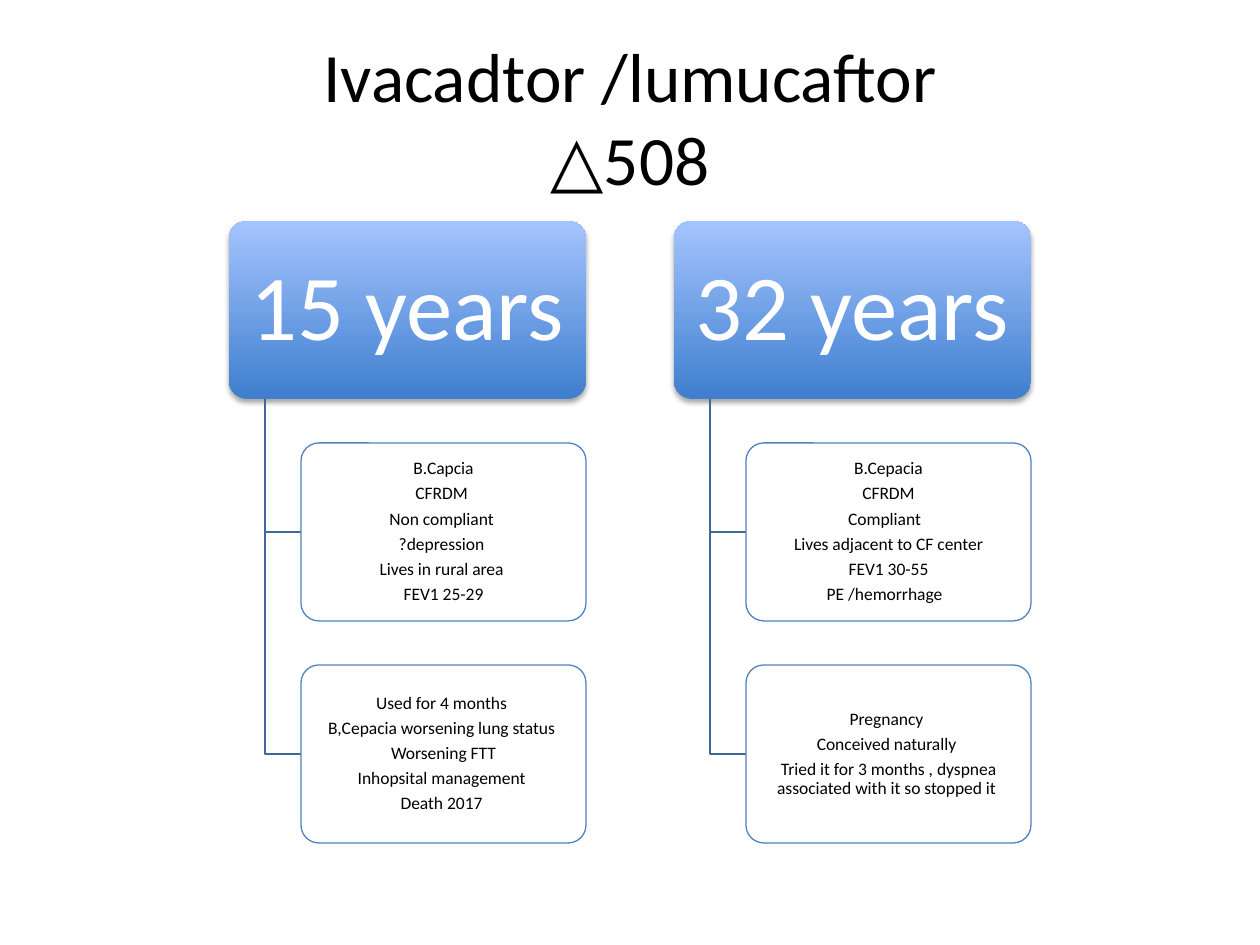
from lxml.etree import SubElement
from pptx import Presentation
from pptx.dml.color import RGBColor
from pptx.enum.shapes import MSO_SHAPE
from pptx.enum.text import MSO_ANCHOR as Anchor, PP_ALIGN as Align
from pptx.oxml.ns import qn
from pptx.util import Pt

EMU_PER_PX = 914400 / 126
COLORS = {
    "text": "000000", "header_text": "FFFFFF", "header_bottom": "3F7FCE",
    "header_top": "A4C4FF", "card": "FFFFFF", "border": "4F81BD",
    "branch": "3F6797", "shadow": "000000",
}
FONT = "Calibri"

COLUMN_LEFT, COLUMN_PITCH = 229, 445
ROW_TOP, ROW_PITCH, BOX_HEIGHT = 221, 222, 178
HEADER_WIDTH, CARD_WIDTH = 357, 285
STEM_OFFSET, CARD_OFFSET = 36, 72

PATIENTS = [
    ("15 years ", [
        ["B.Capcia", "CFRDM ", "Non compliant ", "?depression ",
         "Lives in rural area ", "FEV1 25-29"],
        ["Used for 4 months ", "B,Cepacia worsening lung status ",
         "Worsening FTT", "Inhopsital management ", "Death 2017 "],
    ]),
    ("32 years ", [
        ["B.Cepacia", "CFRDM", "Compliant  ", "Lives adjacent to CF center",
         "FEV1 30-55", "PE /hemorrhage  "],
        ["Pregnancy ", "Conceived naturally ",
         "Tried it for 3 months , dyspnea associated with it so stopped it "],
    ]),
]


def px(length):
    return round(length * EMU_PER_PX)


def rgb(name):
    return RGBColor.from_string(COLORS[name])


class SlideBuilder:
    """Holds the style and the slide being built."""

    def __init__(self, slide):
        self.slide = slide

    def add_run(self, paragraph, text, size, color):
        run = paragraph.add_run()
        run.text = text
        run.font.name = FONT
        run.font.size = Pt(size)
        run.font.color.rgb = rgb(color)

    def title(self, lines, box):
        shape = self.slide.shapes.title
        shape.left, shape.top, shape.width, shape.height = map(px, box)
        frame = shape.text_frame
        frame.vertical_anchor = Anchor.MIDDLE
        paragraph = frame.paragraphs[0]
        paragraph.alignment = Align.CENTER
        for index, line in enumerate(lines):
            if index:
                paragraph.add_line_break()
            self.add_run(paragraph, line, 39.6, "text")

    def rounded_box(self, box, lines, size, color, insets):
        shape = self.slide.shapes.add_shape(
            MSO_SHAPE.ROUNDED_RECTANGLE, *map(px, box))
        shape.adjustments[0] = 0.1
        shape.shadow.inherit = False
        frame = shape.text_frame
        frame.word_wrap = True
        frame.vertical_anchor = Anchor.MIDDLE
        frame.margin_left = frame.margin_right = px(insets[0])
        frame.margin_top = frame.margin_bottom = px(insets[1])
        for index, line in enumerate(lines):
            paragraph = frame.add_paragraph() if index else frame.paragraphs[0]
            paragraph.alignment = Align.CENTER
            paragraph.line_spacing = 0.9
            paragraph.space_after = Pt(size * 0.35)
            self.add_run(paragraph, line, size, color)
        return shape

    def header(self, box, text):
        shape = self.rounded_box(box, [text], 53, "header_text", (14, 9))
        shape.line.fill.background()
        shape.fill.gradient()
        shape.fill.gradient_angle = 90
        stops = shape.fill.gradient_stops
        for stop, color in zip(stops, ("header_bottom", "header_top")):
            stop.color.rgb = rgb(color)
        self.drop_shadow(shape)

    def drop_shadow(self, shape):
        effects = shape._element.spPr.find(qn("a:effectLst"))
        shadow = SubElement(
            effects, qn("a:outerShdw"), blurRad=str(Pt(3.1)),
            dist=str(Pt(1.8)), dir="5400000", rotWithShape="0")
        color = SubElement(shadow, qn("a:srgbClr"), val=COLORS["shadow"])
        SubElement(color, qn("a:alpha"), val="35000")

    def card(self, box, lines):
        shape = self.rounded_box(box, lines, 10, "text", (3, 2))
        shape.fill.solid()
        shape.fill.fore_color.rgb = rgb("card")
        color = shape._element.spPr.find(qn("a:solidFill"))[0]
        SubElement(color, qn("a:alpha"), val="90000")
        self.outline(shape, "border")

    def branch(self, start, end):
        """Draw a line down from start, then right to end."""
        builder = self.slide.shapes.build_freeform(*start, scale=EMU_PER_PX)
        builder.add_line_segments([(start[0], end[1]), end], close=False)
        shape = builder.convert_to_shape()
        shape.shadow.inherit = False
        shape.fill.background()
        self.outline(shape, "branch")

    def outline(self, shape, color):
        shape.line.color.rgb = rgb(color)
        shape.line.width = Pt(0.75)


def main():
    presentation = Presentation()
    presentation.slide_width, presentation.slide_height = px(1260), px(945)
    title_only = presentation.slide_layouts[5]
    builder = SlideBuilder(presentation.slides.add_slide(title_only))
    builder.title(["Ivacadtor /lumucaftor", "△508"], (63, 38, 1134, 157))

    for column, (age, cards) in enumerate(PATIENTS):
        left = COLUMN_LEFT + column * COLUMN_PITCH
        builder.header((left, ROW_TOP, HEADER_WIDTH, BOX_HEIGHT), age)
        stem = (left + STEM_OFFSET, ROW_TOP + BOX_HEIGHT)
        card_left = left + CARD_OFFSET
        for row, lines in enumerate(cards, start=1):
            top = ROW_TOP + row * ROW_PITCH
            builder.branch(stem, (card_left, top + BOX_HEIGHT // 2))
            builder.card((card_left, top, CARD_WIDTH, BOX_HEIGHT), lines)

    presentation.save("out.pptx")


if __name__ == "__main__":
    main()
